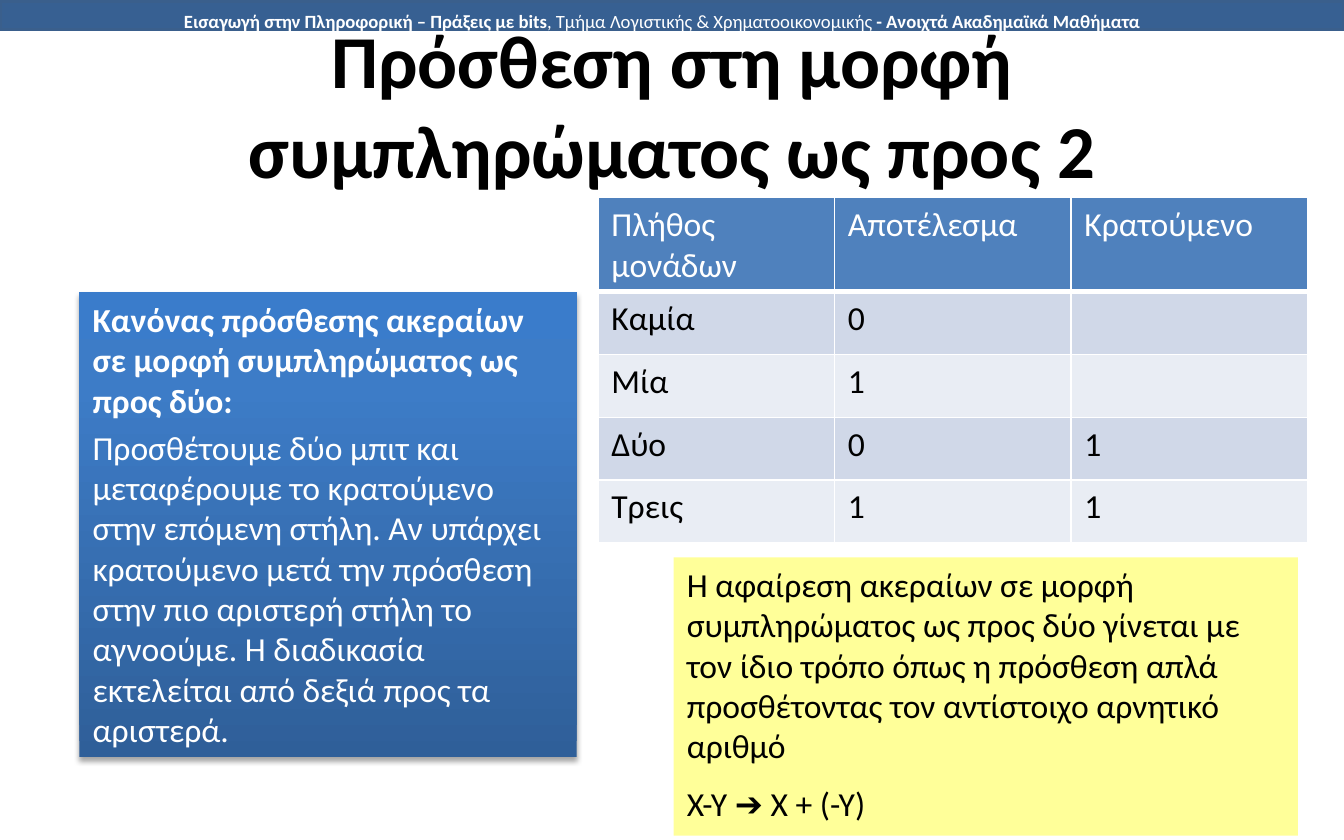
from copy import deepcopy

from lxml import etree
from pptx import Presentation
from pptx.dml.color import RGBColor
from pptx.enum.shapes import MSO_SHAPE
from pptx.enum.text import MSO_ANCHOR, PP_ALIGN
from pptx.oxml.ns import qn
from pptx.util import Cm, Pt

RECTANGLE = MSO_SHAPE.RECTANGLE
LEFT, CENTER = PP_ALIGN.LEFT, PP_ALIGN.CENTER
TOP, MIDDLE = MSO_ANCHOR.TOP, MSO_ANCHOR.MIDDLE

FONT = "Calibri"
BLACK, WHITE = "000000", "FFFFFF"
BAND_FILL, BAND_LINE = "376092", "3A5F8C"
RULE_STOPS = [(0, "2F5F99"), (0.8, "3D7CC7"), (1, "3A7CCB")]
NOTE_FILL = "FFFF99"
HEADER_FILL, ROW_FILLS = "4F81BD", ("D0D8E8", "E9EDF4")

BAND_TEXT = [[
    ("Εισαγωγή στην Πληροφορική – Πράξεις με bits", True),
    (", Τμήμα Λογιστικής & Χρηματοοικονομικής ", False),
    ("- Ανοιχτά Ακαδημαϊκά Μαθήματα", True),
]]
TITLE = [[("Πρόσθεση στη μορφή συμπληρώματος ως προς 2", True)]]
RULE = [
    [("Κανόνας πρόσθεσης ακεραίων σε μορφή συμπληρώματος ως προς δύο:", True)],
    [("Προσθέτουμε δύο μπιτ και μεταφέρουμε το κρατούμενο στην επόμενη στήλη. "
      "Αν υπάρχει κρατούμενο μετά την πρόσθεση στην πιο αριστερή στήλη το "
      "αγνοούμε. Η διαδικασία εκτελείται από δεξιά προς τα αριστερά.", False)],
]
SUBTRACTION = [
    [("Η αφαίρεση ακεραίων σε μορφή συμπληρώματος ως προς δύο γίνεται με τον "
      "ίδιο τρόπο όπως η πρόσθεση απλά προσθέτοντας τον αντίστοιχο αρνητικό "
      "αριθμό", False)],
    [("Χ-Υ ➔ Χ + (-Υ)", False)],
]
CARRY_ROWS = [
    ("Πλήθος μονάδων", "Αποτέλεσμα", "Κρατούμενο"),
    ("Καμία", "0", ""),
    ("Μία", "1", ""),
    ("Δύο", "0", "1"),
    ("Τρεις", "1", "1"),
]


def color(value):
    return RGBColor.from_string(value)


class SlideBuilder:
    """Holds the text style and the current slide, and adds elements to it."""

    def __init__(self, slide, font):
        self.slide = slide
        self.font = font

    def format_run(self, run, size, text_color, bold):
        run.font.name = self.font
        run.font.size = Pt(size)
        run.font.bold = bold
        run.font.color.rgb = color(text_color)

    def fill_text(self, shape, paragraphs, size, text_color=BLACK, align=LEFT,
                  anchor=TOP, gap=0, line_spacing=1.0):
        frame = shape.text_frame
        frame.word_wrap = True
        frame.vertical_anchor = anchor
        for index, runs in enumerate(paragraphs):
            paragraph = frame.add_paragraph() if index else frame.paragraphs[0]
            paragraph.alignment = align
            paragraph.line_spacing = line_spacing
            paragraph.space_before = Pt(gap if index else 0)
            for text, bold in runs:
                run = paragraph.add_run()
                run.text = text
                self.format_run(run, size, text_color, bold)

    def text(self, box, paragraphs, size, **style):
        shape = self.slide.shapes.add_textbox(*map(Cm, box))
        self.fill_text(shape, paragraphs, size, **style)

    def rectangle(self, box, fill=None, line=None):
        shape = self.slide.shapes.add_shape(RECTANGLE, *map(Cm, box))
        shape.shadow.inherit = False
        if fill:
            shape.fill.solid()
            shape.fill.fore_color.rgb = color(fill)
        if line:
            shape.line.color.rgb = color(line)
            shape.line.width = Pt(2)
        else:
            shape.line.fill.background()
        return shape

    def gradient(self, shape, stops, angle):
        shape.fill.gradient()
        shape.fill.gradient_angle = angle
        stop_list = shape.element.spPr.find(".//" + qn("a:gsLst"))
        while len(stop_list) < len(stops):
            stop_list.append(deepcopy(stop_list[0]))
        for stop, (position, value) in zip(shape.fill.gradient_stops, stops):
            stop.position = position
            stop.color.rgb = color(value)

    def shadow(self, shape, blur, distance, opacity):
        effects = shape.element.spPr.find(qn("a:effectLst"))
        outer = etree.SubElement(
            effects, qn("a:outerShdw"), blurRad=str(Pt(blur)),
            dist=str(Pt(distance)), dir="5400000", rotWithShape="0")
        black = etree.SubElement(outer, qn("a:srgbClr"), val=BLACK)
        etree.SubElement(black, qn("a:alpha"), val=str(opacity * 1000))

    def borders(self, cell, bottom):
        properties = cell._tc.get_or_add_tcPr()
        for side, width in (("L", 1), ("R", 1), ("T", 1), ("B", bottom)):
            line = etree.SubElement(properties, qn("a:ln" + side), w=str(Pt(width)))
            fill = etree.SubElement(line, qn("a:solidFill"))
            etree.SubElement(fill, qn("a:srgbClr"), val=WHITE)

    def table(self, left, top, column_width, heights, rows, size):
        columns = len(rows[0])
        table = self.slide.shapes.add_table(
            len(rows), columns, Cm(left), Cm(top),
            Cm(column_width * columns), Cm(sum(heights))).table
        table.horz_banding = False
        for column in table.columns:
            column.width = Cm(column_width)
        for row_index, values in enumerate(rows):
            header = row_index == 0
            table.rows[row_index].height = Cm(heights[row_index])
            for column_index, value in enumerate(values):
                cell = table.cell(row_index, column_index)
                self.borders(cell, 3 if header else 1)
                cell.fill.solid()
                cell.fill.fore_color.rgb = color(
                    HEADER_FILL if header else ROW_FILLS[(row_index - 1) % 2])
                cell.text_frame.text = value
                for run in cell.text_frame.paragraphs[0].runs:
                    self.format_run(run, size, WHITE if header else BLACK, False)


def main():
    presentation = Presentation()
    presentation.slide_width = Cm(25.4)
    presentation.slide_height = Cm(15.88)
    slide = presentation.slides.add_slide(presentation.slide_layouts[6])
    builder = SlideBuilder(slide, FONT)

    builder.rectangle((0, 0.03, 25.4, 0.53), BAND_FILL, BAND_LINE)
    builder.text((0.71, -0.15, 23.6, 0.89), BAND_TEXT, 10,
                 text_color=WHITE, align=CENTER, line_spacing=1.5)
    builder.text((1.27, 0.64, 22.86, 2.64), TITLE, 40, align=CENTER, anchor=MIDDLE)

    rule_box = builder.rectangle((1.5, 5.53, 9.4, 8.79))
    builder.gradient(rule_box, RULE_STOPS, 90)
    builder.shadow(rule_box, blur=3.1, distance=1.8, opacity=35)
    builder.fill_text(rule_box, RULE, 18, text_color=WHITE, gap=3.6)

    note_box = builder.rectangle((12.73, 10.54, 11.8, 5.26), NOTE_FILL)
    builder.fill_text(note_box, SUBTRACTION, 18, gap=9)

    builder.table(11.3, 3.73, 4.47, [1.75] + [1.19] * 4, CARRY_ROWS, 18)

    presentation.save("out.pptx")


if __name__ == "__main__":
    main()
